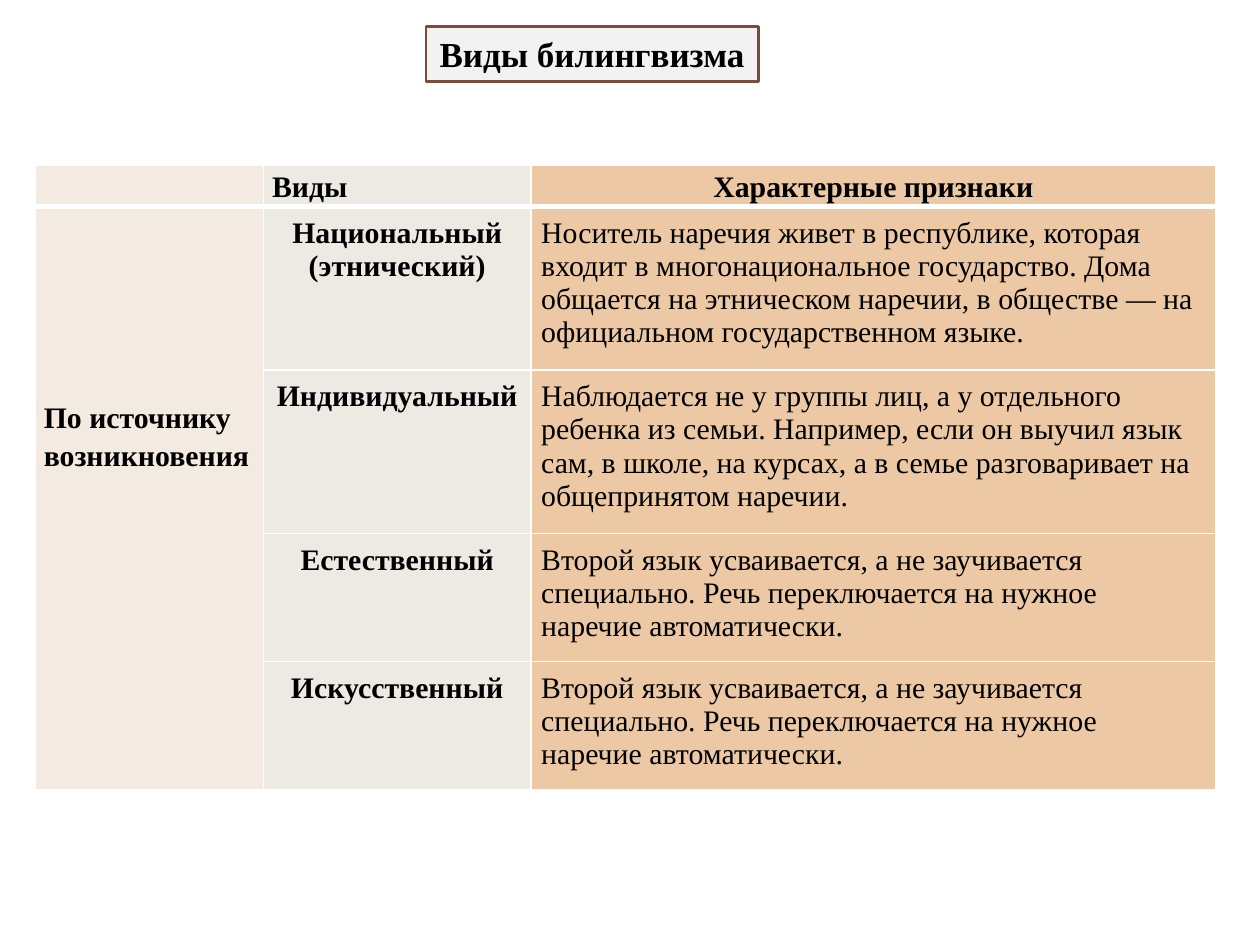
from lxml import etree
from pptx import Presentation
from pptx.dml.color import RGBColor
from pptx.enum.text import MSO_ANCHOR as Anchor, MSO_AUTO_SIZE as Fit, PP_ALIGN as Align
from pptx.oxml.ns import qn
from pptx.util import Pt


def color(code):
    return RGBColor.from_string(code)


def edge(cell, side, width):
    """Draw one white border of a cell."""
    line = etree.SubElement(cell._tc.get_or_add_tcPr(), qn("a:ln" + side), w=str(Pt(width)))
    fill = etree.SubElement(line, qn("a:solidFill"))
    etree.SubElement(fill, qn("a:srgbClr"), val="FFFFFF")


deck = Presentation()
deck.slide_width, deck.slide_height = Pt(720), Pt(540)
slide = deck.slides.add_slide(deck.slide_layouts[5])

title = slide.shapes.title
title.left, title.top, title.width, title.height = Pt(243.4), Pt(15), Pt(190), Pt(31.5)
title.fill.solid()
title.fill.fore_color.rgb = color("F2F2F2")
title.line.color.rgb = color("7C4B3B")
title.line.width = Pt(1.5)
frame = title.text_frame
frame.text = "Виды билингвизма"
frame.word_wrap = False
frame.auto_size = Fit.NONE
frame.vertical_anchor = Anchor.MIDDLE
head = frame.paragraphs[0]
head.alignment = Align.CENTER
font = head.runs[0].font
looks = {"name": "Times New Roman", "size": Pt(20), "bold": True}
for key, value in looks.items():
    setattr(font, key, value)
font.color.rgb = color("000000")

learned = ("Второй язык усваивается, а не заучивается специально. "
           "Речь переключается на нужное наречие автоматически.")
rows = [
    ("", "Виды", "Характерные признаки"),
    ("По источнику возникновения", "Национальный (этнический)",
     "Носитель наречия живет в республике, которая входит в многонациональное "
     "государство. Дома общается на этническом наречии, в обществе — на "
     "официальном государственном языке."),
    ("", "Индивидуальный",
     "Наблюдается не у группы лиц, а у отдельного ребенка из семьи. Например, "
     "если он выучил язык сам, в школе, на курсах, а в семье разговаривает на "
     "общепринятом наречии."),
    ("", "Естественный", learned),
    ("", "Искусственный", learned),
]
widths = [130.5, 153, 391.2]
heights = [23.4, 93.5, 93.5, 73.2, 73.2]
fills = ["F3EAE2", "ECEAE3", "ECC8A4"]

table = slide.shapes.add_table(len(rows), len(widths), Pt(20), Pt(94.5),
                               Pt(sum(widths)), Pt(sum(heights))).table
for col, width in zip(table.columns, widths):
    col.width = Pt(width)
for row, height in zip(table.rows, heights):
    row.height = Pt(height)
table.cell(1, 0).merge(table.cell(4, 0))

for r, texts in enumerate(rows):
    for c, text in enumerate(texts):
        cell = table.cell(r, c)
        loose = r == 0 or c == 0
        side = 5 if loose else 5.8
        gap = 0 if loose else 5.8
        cell.margin_left = cell.margin_right = Pt(side)
        cell.margin_top = Pt(109 if (r, c) == (1, 0) else gap)
        cell.margin_bottom = Pt(gap)
        for name in "LRTB":
            thick = (r, name) in [(0, "B"), (1, "T")]
            edge(cell, name, 3 if thick else 1)
        cell.fill.solid()
        cell.fill.fore_color.rgb = color(fills[c])
        if not text:
            continue
        para = cell.text_frame.paragraphs[0]
        middle = (r == 0 and c == 2) or (r > 0 and c == 1)
        para.alignment = Align.CENTER if middle else Align.LEFT
        if loose:
            para.line_spacing = 1.15
        run = para.add_run()
        run.text = text
        looks = {"name": "Times New Roman", "size": Pt(17), "bold": r == 0 or c < 2}
        for key, value in looks.items():
            setattr(run.font, key, value)
        run.font.color.rgb = color("000000")

deck.save("out.pptx")
